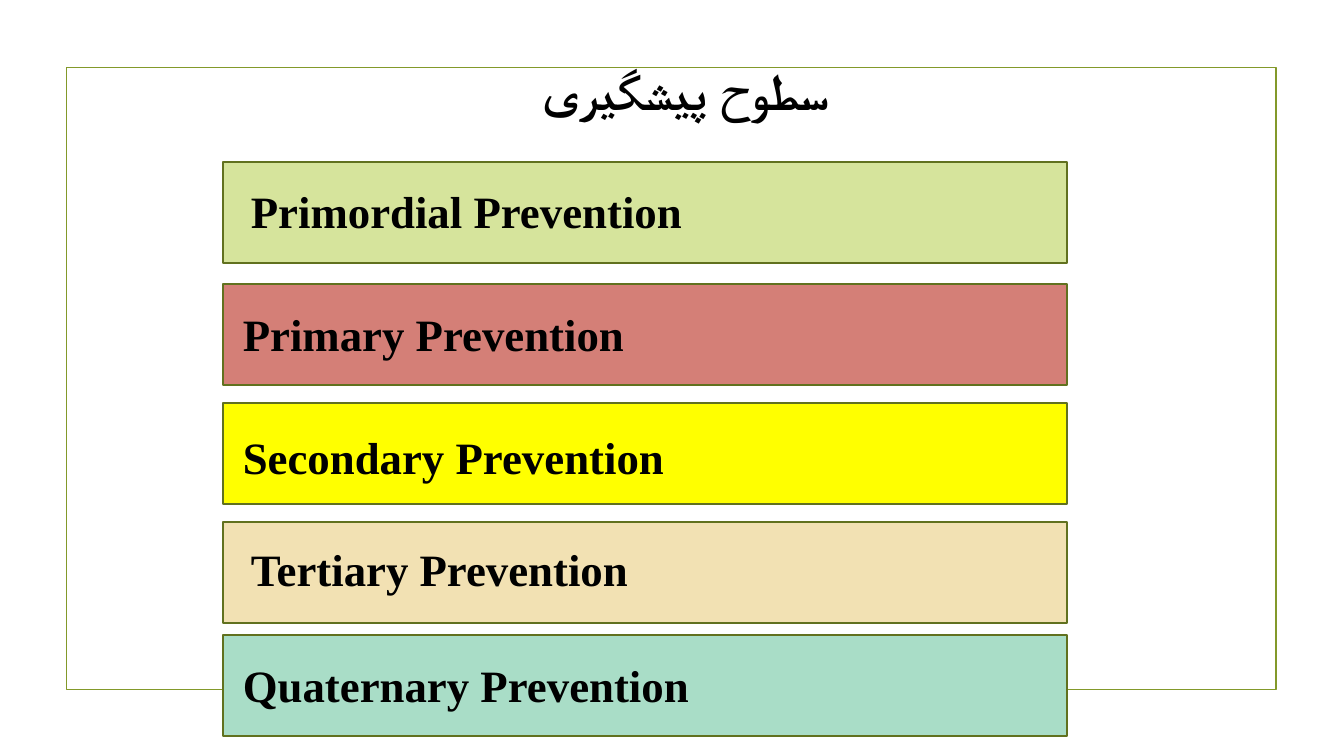
import pptx
import pptx.util
import pptx.dml.color
import pptx.enum.shapes
import pptx.enum.text
import lxml.etree

Inches = pptx.util.Inches
FONT = "Times New Roman"
COLORS = {
    "frame": "83992A",
    "bar_line": "61711F",
    "text": "000000",
    "primordial": "D6E49C",
    "primary": "D47F77",
    "secondary": "FFFF00",
    "tertiary": "F2E1B3",
    "quaternary": "A9DDC7",
}
BAR_LEFT, BAR_WIDTH, BAR_HEIGHT = 2.21, 8.37, 1
LABEL_HEIGHT = 0.64
LEVELS = [
    ("Primordial Prevention", "primordial", 1.61, 2.39, 1.77),
    ("Primary Prevention", "primary", 2.82, 2.31, 2.99),
    ("Secondary Prevention", "secondary", 4, 2.31, 4.21),
    ("Tertiary Prevention", "tertiary", 5.18, 2.39, 5.33),
    ("Quaternary Prevention", "quaternary", 6.3, 2.31, 6.48),
]


def add_rectangle(left, top, width, height, line, fill=None):
    shape = slide.shapes.add_shape(
        pptx.enum.shapes.MSO_SHAPE.RECTANGLE,
        Inches(left), Inches(top), Inches(width), Inches(height))
    shape.shadow.inherit = False
    shape.line.color.rgb = pptx.dml.color.RGBColor.from_string(COLORS[line])
    shape.line.width = pptx.util.Pt(1.25)
    if fill:
        shape.fill.solid()
        shape.fill.fore_color.rgb = pptx.dml.color.RGBColor.from_string(COLORS[fill])
    else:
        shape.fill.background()
    return shape


def write_text(shape, text, size):
    frame = shape.text_frame
    frame.text = text
    frame.word_wrap = True
    frame.auto_size = pptx.enum.text.MSO_AUTO_SIZE.SHAPE_TO_FIT_TEXT
    frame.vertical_anchor = pptx.enum.text.MSO_ANCHOR.TOP
    font = frame.paragraphs[0].runs[0].font
    font.name = FONT
    font.size = pptx.util.Pt(size)
    font.bold = True
    font.color.rgb = pptx.dml.color.RGBColor.from_string(COLORS["text"])
    return frame.paragraphs[0]


presentation = pptx.Presentation()
presentation.slide_width = Inches(13.33)
presentation.slide_height = Inches(7.5)
slide = presentation.slides.add_slide(presentation.slide_layouts[5])

page_frame = add_rectangle(0.66, 0.67, 12, 6.17, "frame")

title = slide.shapes.title
title.left, title.top = Inches(2.57), Inches(0.55)
title.width, title.height = Inches(8.47), Inches(0.71)
paragraph = write_text(title, "سطوح پیشگیری", 36)
paragraph.alignment = pptx.enum.text.PP_ALIGN.CENTER
paragraph.runs[0].font.language_id = pptx.enum.lang.MSO_LANGUAGE_ID.FARSI if hasattr(pptx.enum, "lang") else None
paragraph_properties = paragraph.runs[0].font
title_paragraph = title.element.find(".//" + pptx.oxml.ns.qn("a:pPr"))
title_paragraph.set("rtl", "1")
latin = title.element.find(".//" + pptx.oxml.ns.qn("a:latin"))
complex_script = lxml.etree.Element(pptx.oxml.ns.qn("a:cs"), typeface=FONT)
latin.addnext(complex_script)
page_frame.element.addnext(title.element)

for text, fill, bar_top, label_left, label_top in LEVELS:
    add_rectangle(BAR_LEFT, bar_top, BAR_WIDTH, BAR_HEIGHT, "bar_line", fill)
    label = slide.shapes.add_textbox(
        Inches(label_left), Inches(label_top), Inches(7.9), Inches(LABEL_HEIGHT))
    write_text(label, text, 32)

presentation.save("out.pptx")
